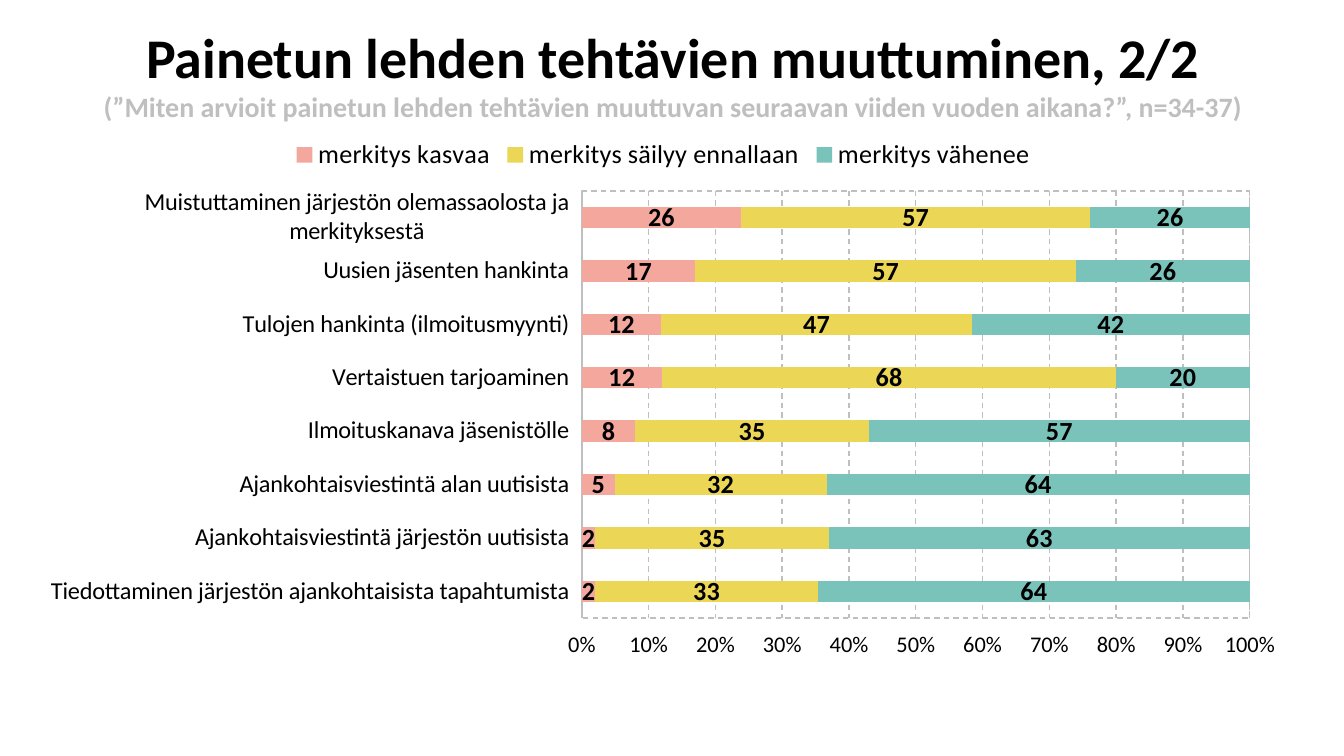
from lxml import etree
from pptx import Presentation
from pptx.chart.data import CategoryChartData
from pptx.dml.color import RGBColor
from pptx.enum.chart import (XL_CHART_TYPE, XL_LABEL_POSITION, XL_LEGEND_POSITION,
                             XL_TICK_LABEL_POSITION, XL_TICK_MARK)
from pptx.enum.dml import MSO_LINE
from pptx.enum.text import MSO_ANCHOR, MSO_AUTO_SIZE, PP_ALIGN
from pptx.oxml import parse_xml
from pptx.oxml.ns import nsdecls, qn
from pptx.util import Inches, Pt

BARS = XL_CHART_TYPE.BAR_STACKED_100
CENTER = XL_LABEL_POSITION.CENTER
TOP = XL_LEGEND_POSITION.TOP
LOW = XL_TICK_LABEL_POSITION.LOW
NONE, OUT = XL_TICK_MARK.NONE, XL_TICK_MARK.OUTSIDE
DASH = MSO_LINE.DASH

BLACK = RGBColor(0, 0, 0)
WHITE = RGBColor(255, 255, 255)
GRAY = RGBColor(0xBF, 0xBF, 0xBF)
PINK = RGBColor(0xF4, 0xA8, 0x9D)
YELLOW = RGBColor(0xEB, 0xD6, 0x56)
TEAL = RGBColor(0x7A, 0xC3, 0xBB)
FACE = "Calibri"

TITLE = "Painetun lehden tehtävien muuttuminen, 2/2"
QUERY = ("(”Miten arvioit painetun lehden tehtävien muuttuvan "
         "seuraavan viiden vuoden aikana?”, n=34-37)")
TASKS = [
    "Tiedottaminen järjestön ajankohtaisista tapahtumista",
    "Ajankohtaisviestintä järjestön uutisista",
    "Ajankohtaisviestintä alan uutisista",
    "Ilmoituskanava jäsenistölle",
    "Vertaistuen tarjoaminen",
    "Tulojen hankinta (ilmoitusmyynti)",
    "Uusien jäsenten hankinta",
    "Muistuttaminen järjestön olemassaolosta ja merkityksestä",
]
SERIES = [
    ("merkitys kasvaa", PINK, (2, 2, 5, 8, 12, 12, 17, 26)),
    ("merkitys säilyy ennallaan", YELLOW, (33, 35, 32, 35, 68, 47, 57, 57)),
    ("merkitys vähenee", TEAL, (64, 63, 64, 57, 20, 42, 26, 26)),
]
# left, top, width, height in inches
HEAD = (0.34, 0, 9.34, 1.08)
CHART = (0.19, 0.92, 9.49, 4.06)
PLOT = (4.33, 1.42, 4.97, 3.18)


def style(font, size, color=BLACK, bold=False):
    font.name, font.size, font.bold = FACE, Pt(size), bold
    font.color.rgb = color


def frame_plot(chart):
    """Fix the inner plot area and give it a dashed border."""
    left, top, wide, high = CHART
    x, y, w, h = PLOT
    shares = {"x": (x - left) / wide, "y": (y - top) / high, "w": w / wide, "h": h / high}
    area = chart._chartSpace.chart.plotArea
    for old in area.findall(qn("c:layout")):
        area.remove(old)
    modes = "".join(f'<c:{k}Mode val="edge"/>' for k in "xy")
    sizes = "".join(f'<c:{k} val="{v:.4f}"/>' for k, v in shares.items())
    area.insert(0, parse_xml(
        f'<c:layout {nsdecls("c")}><c:manualLayout><c:layoutTarget val="inner"/>'
        f'{modes}{sizes}</c:manualLayout></c:layout>'))
    area.append(parse_xml(
        f'<c:spPr {nsdecls("c", "a")}><a:noFill/><a:ln w="9525"><a:solidFill>'
        f'<a:srgbClr val="{GRAY}"/></a:solidFill><a:prstDash val="dash"/></a:ln></c:spPr>'))


def add_bars(slide):
    data = CategoryChartData(number_format="0")
    data.categories = TASKS
    for name, _, vals in SERIES:
        data.add_series(name, vals)
    box = [Inches(n) for n in CHART]
    chart = slide.shapes.add_chart(BARS, *box, data).chart
    style(chart.font, 18)
    chart.has_title = False

    chart.has_legend = True
    legend = chart.legend
    legend.position, legend.include_in_layout = TOP, False
    style(legend.font, 14)

    plot = chart.plots[0]
    plot.gap_width, plot.overlap, plot.vary_by_categories = 150, 100, False
    for bar, (_, color, _) in zip(plot.series, SERIES):
        bar.format.fill.solid()
        bar.format.fill.fore_color.rgb = color
        bar.invert_if_negative = False
        labels = bar.data_labels
        labels.show_value, labels.position = True, CENTER
        labels.number_format, labels.number_format_is_linked = "0", False
        style(labels.font, 14, bold=True)

    for axis, size, mark in ((chart.category_axis, 13, NONE), (chart.value_axis, 12, OUT)):
        style(axis.tick_labels.font, size)
        axis.major_tick_mark, axis.minor_tick_mark = mark, NONE
        axis.format.line.fill.background()
    chart.category_axis.tick_label_position = LOW
    scale = chart.value_axis
    scale.minimum_scale, scale.maximum_scale, scale.major_unit = 0, 1, 0.1
    scale.tick_labels.number_format = "0%"
    scale.tick_labels.number_format_is_linked = False
    scale.has_major_gridlines = True
    grid = scale.major_gridlines.format.line
    grid.color.rgb, grid.width, grid.dash_style = GRAY, Pt(0.75), DASH
    frame_plot(chart)


def set_title(slide):
    title = slide.shapes.title
    title.left, title.top, title.width, title.height = [Inches(n) for n in HEAD]
    title.fill.solid()
    title.fill.fore_color.rgb = WHITE
    tint = title._element.spPr.find(".//" + qn("a:srgbClr"))
    etree.SubElement(tint, qn("a:alpha")).set("val", "93000")
    frame = title.text_frame
    frame.word_wrap, frame.auto_size = True, MSO_AUTO_SIZE.NONE
    frame.vertical_anchor = MSO_ANCHOR.MIDDLE
    para = frame.paragraphs[0]
    para.alignment = PP_ALIGN.CENTER
    style(para.font, 30, bold=True)
    para.add_run().text = TITLE
    para.add_line_break()
    query = para.add_run()
    query.text = QUERY
    query.font.size, query.font.color.rgb = Pt(15), GRAY
    slide.shapes._spTree.append(title._element)  # bring to front


deck = Presentation()
deck.slide_width = Inches(10)
deck.slide_height = deck.slide_width * 9 // 16
slide = deck.slides.add_slide(deck.slide_layouts[5])
add_bars(slide)
set_title(slide)
deck.save("out.pptx")
